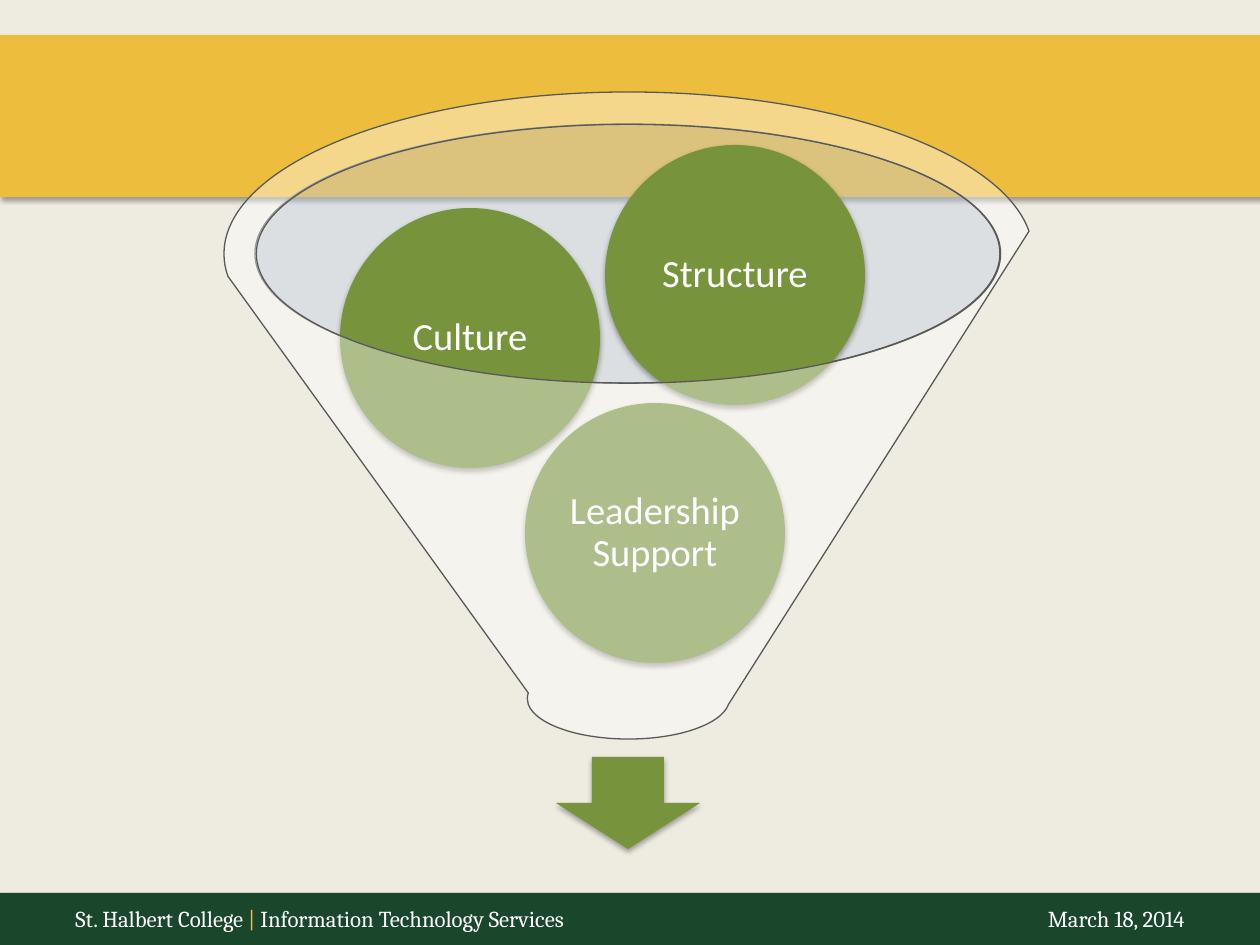
from dataclasses import dataclass

import lxml.etree
import pptx
import pptx.dml.color
import pptx.enum.shapes
import pptx.enum.text
import pptx.oxml.ns
import pptx.util

SHAPE = pptx.enum.shapes.MSO_SHAPE
ALIGN = pptx.enum.text.PP_ALIGN
ANCHOR = pptx.enum.text.MSO_ANCHOR
PX = 914400 / 126
WIDTH, HEIGHT = 1260, 945


@dataclass(frozen=True)
class Theme:
    background: str = "EEECE1"
    footer: str = "1A472B"
    gold: str = "EDBD3D"
    green: str = "77933C"
    mouth: str = "C2CDE1"
    white: str = "FFFFFF"
    outline: str = "595959"
    heading_font: str = "Cambria"
    body_font: str = "Calibri"
    footer_size: int = 13
    label_size: int = 22
    line_width: float = 0.75


def emu(pixels):
    return round(pixels * PX)


def color(value):
    return pptx.dml.color.RGBColor.from_string(value)


def apply(target, values):
    for name, value in values.items():
        setattr(target, name, value)


def add_element(parent, tag, **attributes):
    element = lxml.etree.SubElement(parent, pptx.oxml.ns.qn(tag))
    for name, value in attributes.items():
        element.set(name, str(value))
    return element


class SlideBuilder:
    def __init__(self, slide, theme):
        self.slide = slide
        self.theme = theme
        slide.background.fill.solid()
        slide.background.fill.fore_color.rgb = color(theme.background)

    def shape(self, kind, box, fill):
        shape = self.slide.shapes.add_shape(kind, *map(emu, box))
        shape.shadow.inherit = False
        shape.fill.solid()
        shape.fill.fore_color.rgb = color(fill)
        shape.line.fill.background()
        return shape

    def solid(self, kind, box, fill):
        shape = self.shape(kind, box, fill)
        effects = shape._element.spPr.find(pptx.oxml.ns.qn("a:effectLst"))
        shadow = add_element(effects, "a:outerShdw", blurRad=40000, dist=23000,
                             dir=5400000, rotWithShape=0)
        shade = add_element(shadow, "a:srgbClr", val="000000")
        add_element(shade, "a:alpha", val=35000)
        return shape

    def glass(self, kind, box, fill):
        shape = self.shape(kind, box, fill)
        tint = shape._element.spPr.find(".//" + pptx.oxml.ns.qn("a:srgbClr"))
        add_element(tint, "a:alpha", val=40000)
        shape.line.color.rgb = color(self.theme.outline)
        shape.line.width = pptx.util.Pt(self.theme.line_width)

    def run(self, paragraph, text, font, size, fill):
        run = paragraph.add_run()
        run.text = text
        apply(run.font, {"name": font, "size": pptx.util.Pt(size)})
        run.font.color.rgb = color(fill)

    def ball(self, left, top, diameter, label):
        theme = self.theme
        shape = self.solid(SHAPE.OVAL, (left, top, diameter, diameter), theme.green)
        inset = emu(4)
        apply(shape.text_frame, {
            "word_wrap": True, "vertical_anchor": ANCHOR.MIDDLE,
            "margin_left": inset, "margin_right": inset,
            "margin_top": inset, "margin_bottom": inset})
        paragraph = shape.text_frame.paragraphs[0]
        apply(paragraph, {"alignment": ALIGN.CENTER, "line_spacing": 0.9})
        self.run(paragraph, label, theme.body_font, theme.label_size, theme.white)

    def footer_text(self, box, tab, pieces):
        theme = self.theme
        frame = self.slide.shapes.add_textbox(*map(emu, box)).text_frame
        apply(frame, {"word_wrap": True, "vertical_anchor": ANCHOR.TOP,
                      "margin_top": 0, "margin_bottom": 0})
        paragraph = frame.paragraphs[0]
        tabs = add_element(paragraph._p.get_or_add_pPr(), "a:tabLst")
        add_element(tabs, "a:tab", pos=emu(tab), algn="r")
        for text, fill in pieces:
            self.run(paragraph, text, theme.heading_font, theme.footer_size, fill)


def main():
    theme = Theme()
    presentation = pptx.Presentation()
    apply(presentation, {"slide_width": emu(WIDTH), "slide_height": emu(HEIGHT)})
    slide = presentation.slides.add_slide(presentation.slide_layouts[6])
    builder = SlideBuilder(slide, theme)

    builder.solid(SHAPE.RECTANGLE, (0, 893, 1263, 52), theme.footer)
    builder.solid(SHAPE.RECTANGLE, (0, 35, 1263, 162), theme.gold)
    builder.footer_text((63, 905, 1134, 50), 1109, [
        ("St. Halbert College ", theme.white),
        ("| ", theme.gold),
        ("Information Technology Services \tMarch 18, 2014", theme.white)])

    builder.glass(SHAPE.OVAL, (255, 124, 745, 259), theme.mouth)
    builder.solid(SHAPE.DOWN_ARROW, (556, 757, 144, 92), theme.green)
    for left, top, label in [(525, 403, "Leadership Support"),
                             (340, 208, "Culture"),
                             (605, 145, "Structure")]:
        builder.ball(left, top, 260, label)
    builder.glass(SHAPE.FUNNEL, (224, 92, 809, 647), theme.white)

    presentation.save("out.pptx")


if __name__ == "__main__":
    main()
